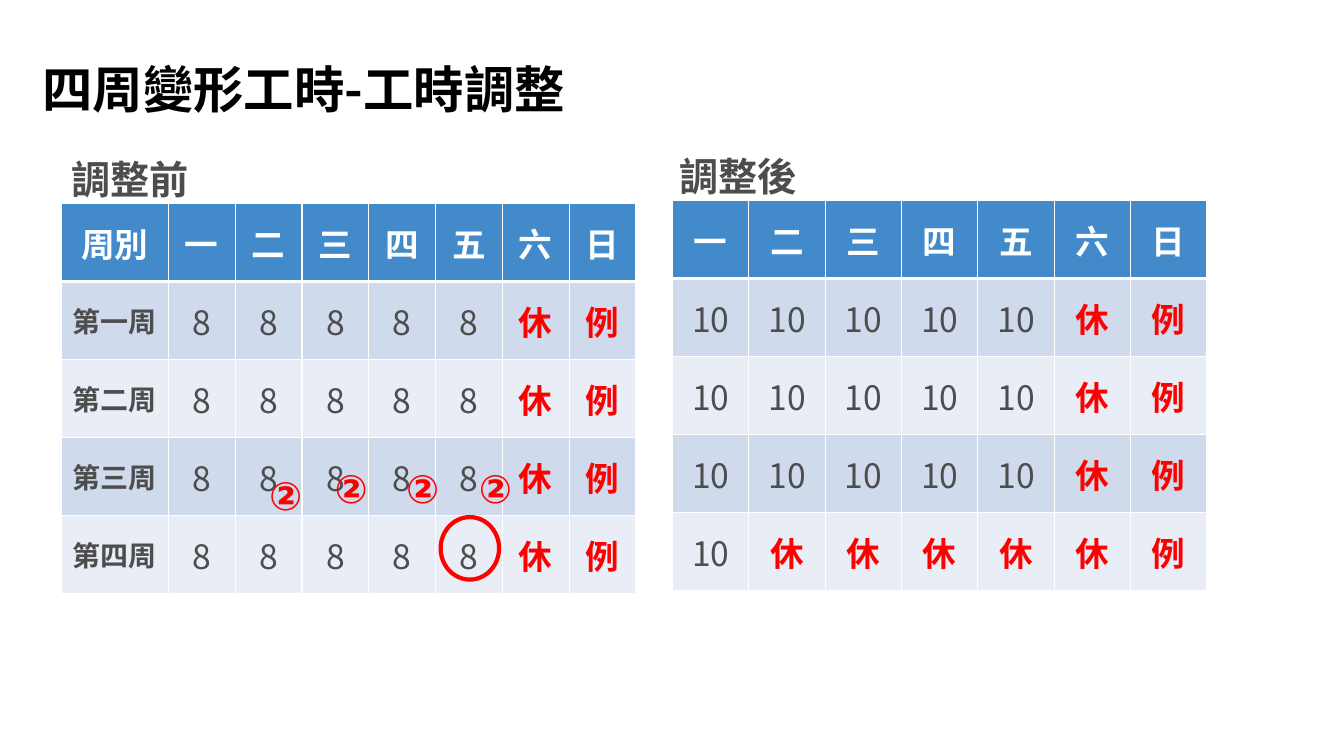
import dataclasses

import pptx
import pptx.chart.data
import pptx.dml.color
import pptx.enum.shapes
import pptx.enum.text
import pptx.oxml
import pptx.oxml.ns
import pptx.util
from lxml import etree

Inches = pptx.util.Inches
Pt = pptx.util.Pt
RGB = pptx.dml.color.RGBColor.from_string
MIDDLE = pptx.enum.text.MSO_ANCHOR.MIDDLE
qn = pptx.oxml.ns.qn


@dataclasses.dataclass(frozen=True)
class Theme:
    font: str = "Noto Sans CJK SC"
    mark_font: str = "DejaVu Sans"
    black: str = "000000"
    white: str = "FFFFFF"
    grey: str = "4D4D4D"
    red: str = "FF0000"
    header: str = "438ACB"
    bands: tuple = ("CFDAEC", "E9EDF6")
    title_size: int = 36
    label_size: int = 28
    hours_size: int = 24
    week_size: int = 20
    thin: int = 1
    thick: int = 3


THEME = Theme()
DAYS = ["一", "二", "三", "四", "五", "六", "日"]
REST = ["休", "例"]


def style_text(frame, size, color, bold=True, font=THEME.font):
    """Format every run, for Latin and East Asian letters alike."""
    for paragraph in frame.paragraphs:
        for run in paragraph.runs:
            run.font.size = Pt(size)
            run.font.bold = bold
            run.font.color.rgb = RGB(color)
            run.font.name = font
            east_asian = etree.SubElement(run.font._element, qn("a:ea"))
            east_asian.set("typeface", font)


def add_label(slide, box, text, size, color, font=THEME.font, wrap=True):
    label = slide.shapes.add_textbox(*map(Inches, box))
    frame = label.text_frame
    frame.word_wrap = wrap
    frame.auto_size = pptx.enum.text.MSO_AUTO_SIZE.SHAPE_TO_FIT_TEXT
    frame.text = text
    style_text(frame, size, color, font=font)
    return frame


def set_borders(cell, top, bottom):
    """Draw the white cell edges; widths in points."""
    properties = cell._tc.get_or_add_tcPr()
    widths = {"lnL": THEME.thin, "lnR": THEME.thin, "lnT": top, "lnB": bottom}
    for position, (edge, width) in enumerate(widths.items()):
        line = etree.Element(qn(f"a:{edge}"), w=str(Pt(width)))
        fill = etree.SubElement(line, qn("a:solidFill"))
        etree.SubElement(fill, qn("a:srgbClr"), val=THEME.white)
        properties.insert(position, line)


def cell_style(row, text):
    """Return size, colour and bold for one entry of a schedule."""
    if row == 0:
        return THEME.hours_size, THEME.white, True
    if text in REST:
        return THEME.hours_size, THEME.red, True
    if text.isdigit():
        return THEME.hours_size, THEME.grey, False
    return THEME.week_size, THEME.grey, True


def add_title(slide, box, text):
    frame = add_label(slide, box, text, THEME.title_size, THEME.black)
    frame.auto_size = pptx.enum.text.MSO_AUTO_SIZE.NONE
    frame.vertical_anchor = MIDDLE
    frame.margin_left = frame.margin_top = frame.margin_bottom = Inches(0.06)


def add_schedule(slide, box, label, label_shift, rows, column_widths):
    left, top, width, height = box
    schedule = slide.shapes.add_table(
        len(rows), len(rows[0]), *map(Inches, box)).table
    schedule.horz_banding = False
    for column, column_width in zip(schedule.columns, column_widths):
        column.width = Inches(column_width)

    for r, entries in enumerate(rows):
        schedule.rows[r].height = Inches(height / len(rows))
        for c, text in enumerate(entries):
            cell = schedule.cell(r, c)
            cell.text = text
            cell.vertical_anchor = MIDDLE
            cell.text_frame.paragraphs[0].alignment = pptx.enum.text.PP_ALIGN.CENTER
            style_text(cell.text_frame, *cell_style(r, text))
            cell.fill.solid()
            cell.fill.fore_color.rgb = RGB(
                THEME.bands[(r - 1) % 2] if r else THEME.header)
            set_borders(cell,
                        top=THEME.thick if r == 1 else THEME.thin,
                        bottom=THEME.thick if r == 0 else THEME.thin)

    # Heading above the schedule
    add_label(slide, (left + label_shift, top - 0.53, 2.3, 0.57), label,
              THEME.label_size, THEME.grey)


def add_moved_hours(slide, box):
    """Ring the last Friday and mark the hours moved out of it."""
    left, top, width, height = box
    ring = slide.shapes.add_shape(
        pptx.enum.shapes.MSO_SHAPE.OVAL,
        Inches(left + 3.76), Inches(top + 3.11), Inches(0.58), Inches(0.62))
    ring.shadow.inherit = False
    ring.fill.background()
    ring.line.color.rgb = RGB(THEME.red)
    ring.line.width = Pt(THEME.thick)

    for x, y in [(4.04, 2.54), (3.32, 2.54), (2.61, 2.54), (1.96, 2.61)]:
        add_label(slide, (left + x, top + y, 0.59, 0.57), "②",
                  THEME.label_size, THEME.red, THEME.mark_font, wrap=False)


def main():
    deck = pptx.Presentation()
    deck.slide_width, deck.slide_height = Inches(13.33), Inches(7.5)
    slide = deck.slides.add_slide(deck.slide_layouts[6])

    add_title(slide, (0.36, 0.55, 12.38, 0.65), "四周變形工時-工時調整")

    # Before: eight hours each weekday
    before_box = (0.61, 2.02, 5.7, 3.87)
    before = [["周別"] + DAYS]
    before += [[f"第{n}周"] + ["8"] * 5 + REST for n in "一二三四"]
    add_schedule(slide, before_box, "調整前", 0, before,
                 [1.06] + [4.64 / 7] * 7)

    # After: ten hours, with the last week mostly free
    after = [DAYS] + [["10"] * 5 + REST] * 3 + [["10"] + ["休"] * 5 + ["例"]]
    add_schedule(slide, (6.67, 1.99, 5.3, 3.87), "調整後", -0.03, after,
                 [5.3 / 7] * 7)

    add_moved_hours(slide, before_box)
    deck.save("out.pptx")


if __name__ == "__main__":
    main()
